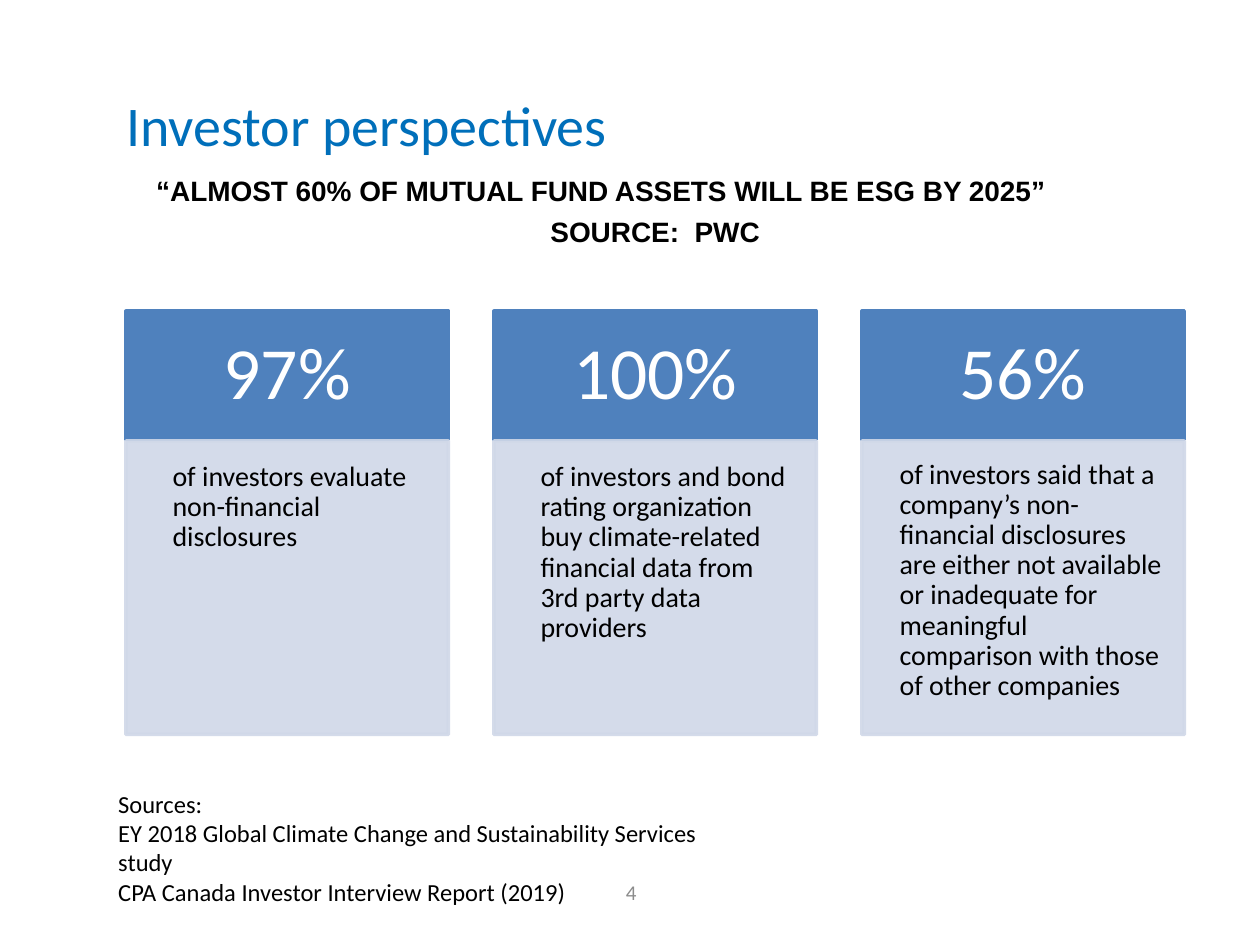
import pptx
import pptx.util
import pptx.dml.color
import pptx.enum.shapes
import pptx.enum.text
import pptx.oxml
import pptx.oxml.ns

Inches = pptx.util.Inches
Pt = pptx.util.Pt
RGBColor = pptx.dml.color.RGBColor
ALIGN = pptx.enum.text.PP_ALIGN
ANCHOR = pptx.enum.text.MSO_ANCHOR

TITLE_BLUE = RGBColor(0x00, 0x6F, 0xBA)
HEADER_BLUE = RGBColor(0x4F, 0x81, 0xBD)
PANEL_BLUE = RGBColor(0xD0, 0xD8, 0xE8)
WHITE = RGBColor(0xFF, 0xFF, 0xFF)
BLACK = RGBColor(0x00, 0x00, 0x00)
GRAY = RGBColor(0x8C, 0x8C, 0x8C)

TITLE = "Investor perspectives"
QUOTE = ["“ALMOST 60% OF MUTUAL FUND ASSETS WILL BE ESG BY 2025”", "SOURCE:  PWC"]
FINDINGS = [
    ("97%", "of investors evaluate non-financial disclosures", (0.37, 0.17, 0.16, 0.17)),
    ("100%", "of investors and bond rating organization buy climate-related "
     "financial data from 3rd party data providers", (0.37, 0.17, 0.16, 0.17)),
    ("56%", "of investors said that a company’s non-financial disclosures are either "
     "not available or inadequate for meaningful comparison with those of other "
     "companies", (0.3, 0.15, 0.15, 0.17)),
]
SOURCES = [
    "Sources:",
    "EY 2018 Global Climate Change and Sustainability Services study",
    "CPA Canada Investor Interview Report (2019)",
]
PAGE_NUMBER = "4"

LEFT, PITCH, CARD_WIDTH = 1, 2.92, 2.56
HEADER_TOP, HEADER_HEIGHT = 2.47, 1.02
PANEL_TOP, PANEL_HEIGHT = 3.5, 2.33


def write(shape, lines, size, color, font="Calibri", align=ALIGN.LEFT,
          anchor=ANCHOR.TOP, insets=(0.1, 0.05, 0.1, 0.05), bold=False, spacing=None):
    frame = shape.text_frame
    frame.word_wrap = True
    frame.vertical_anchor = anchor
    (frame.margin_left, frame.margin_top,
     frame.margin_right, frame.margin_bottom) = map(Inches, insets)
    frame.text = "\n".join(lines)
    for paragraph in frame.paragraphs:
        paragraph.alignment = align
        paragraph.line_spacing = spacing
        for run in paragraph.runs:
            run.font.name = font
            run.font.size = Pt(size)
            run.font.bold = bold
            run.font.color.rgb = color
    return frame


def add_text(slide, box, lines, size, color, **style):
    shape = slide.shapes.add_textbox(*map(Inches, box))
    return write(shape, lines, size, color, **style)


def add_block(slide, box, color, opacity=100):
    shape = slide.shapes.add_shape(
        pptx.enum.shapes.MSO_SHAPE.RECTANGLE, *map(Inches, box))
    shape.shadow.inherit = False
    shape.fill.solid()
    shape.fill.fore_color.rgb = color
    shape.line.color.rgb = color
    shape.line.width = Pt(2)
    if opacity < 100:
        for element in shape.element.spPr.iter(pptx.oxml.ns.qn("a:srgbClr")):
            element.append(pptx.oxml.parse_xml(
                f'<a:alpha {pptx.oxml.ns.nsdecls("a")} val="{opacity * 1000}"/>'))
    return shape


def main():
    presentation = pptx.Presentation()
    presentation.slide_width = Inches(10)
    presentation.slide_height = Inches(7.5)
    slide = presentation.slides.add_slide(presentation.slide_layouts[5])

    title = slide.shapes.title
    title.left, title.top, title.width, title.height = map(Inches, (LEFT, 0.69, 8.4, 0.59))
    write(title, [TITLE], 32, TITLE_BLUE, anchor=ANCHOR.MIDDLE, insets=(0, 0, 0, 0))

    quote = add_text(slide, (LEFT, 1.38, 8.4, 0.59), QUOTE, 16, BLACK, font="Arial",
                     align=ALIGN.CENTER, insets=(0, 0, 0, 0), bold=True)
    statement, credit = quote.paragraphs
    statement.alignment = ALIGN.LEFT
    statement._p.get_or_add_pPr().set("marL", str(Inches(0.24)))
    credit.space_before = Pt(4)

    for index, (figure, finding, insets) in enumerate(FINDINGS):
        left = LEFT + index * PITCH
        header = add_block(slide, (left, HEADER_TOP, CARD_WIDTH, HEADER_HEIGHT), HEADER_BLUE)
        write(header, [figure], 42, WHITE, align=ALIGN.CENTER, anchor=ANCHOR.MIDDLE,
              insets=(0.33, 0.19, 0.33, 0.19), spacing=0.9)
        panel = add_block(slide, (left, PANEL_TOP, CARD_WIDTH, PANEL_HEIGHT), PANEL_BLUE, 90)
        write(panel, [finding], 16, BLACK, insets=insets, spacing=0.9)

    add_text(slide, (0.84, 6.21, 5, 1.04), SOURCES, 14, BLACK)
    add_text(slide, (3.97, 6.88, 1.18, 0.4), [PAGE_NUMBER], 12, GRAY,
             align=ALIGN.RIGHT, anchor=ANCHOR.MIDDLE)

    presentation.save("out.pptx")


if __name__ == "__main__":
    main()
